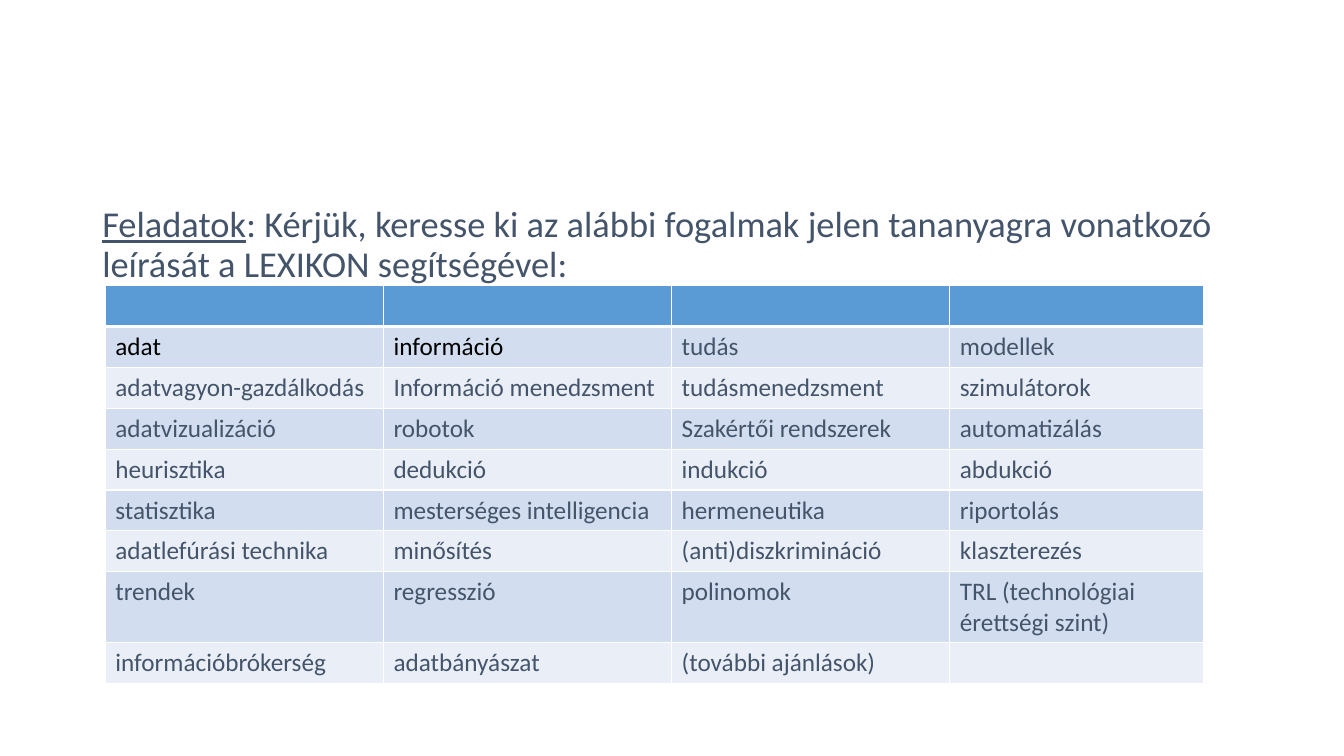
from dataclasses import dataclass

from lxml import etree
from pptx import Presentation
from pptx.dml.color import RGBColor
from pptx.oxml import ns
from pptx.util import Pt


@dataclass(frozen=True)
class Theme:
    font: str = "Calibri"
    text: str = "44546A"
    black: str = "000000"
    header: str = "5B9BD5"
    bands: tuple = ("D2DEEF", "EAEFF7")
    border: str = "FFFFFF"
    task_size: int = 26
    cell_size: int = 18
    thin: int = 1
    thick: int = 3


THEME = Theme()
COLUMN_WIDTHS = (198.7, 205.9, 198.7, 181.4)
ROW_HEIGHT = 29.2
BLACK_TERMS = ("adat", "információ")
TERMS = (
    ("adat", "információ", "tudás", "modellek"),
    ("adatvagyon-gazdálkodás", "Információ menedzsment", "tudásmenedzsment", "szimulátorok"),
    ("adatvizualizáció", "robotok", "Szakértői rendszerek", "automatizálás"),
    ("heurisztika", "dedukció", "indukció", "abdukció"),
    ("statisztika", "mesterséges intelligencia", "hermeneutika", "riportolás"),
    ("adatlefúrási technika", "minősítés", "(anti)diszkrimináció", "klaszterezés"),
    ("trendek", "regresszió", "polinomok", "TRL (technológiai érettségi szint)"),
    ("információbrókerség", "adatbányászat", "(további ajánlások)", ""),
)


def style_font(font, size, color):
    font.name = THEME.font
    font.size = Pt(size)
    font.color.rgb = RGBColor.from_string(color)


def add_run(p, words, size, color, underline=False):
    r = p.add_run()
    r.text = words
    style_font(r.font, size, color)
    r.font.underline = underline


def set_borders(cell, top, bottom):
    tc_pr = cell._tc.get_or_add_tcPr()
    widths = {"L": THEME.thin, "R": THEME.thin, "T": top, "B": bottom}
    for side, width in widths.items():
        line = etree.SubElement(tc_pr, ns.qn(f"a:ln{side}"), w=str(Pt(width)))
        fill = etree.SubElement(line, ns.qn("a:solidFill"))
        etree.SubElement(fill, ns.qn("a:srgbClr"), val=THEME.border)


def fill_cell(cell, words, color, top, bottom):
    set_borders(cell, top, bottom)
    cell.fill.solid()
    cell.fill.fore_color.rgb = RGBColor.from_string(color)
    p = cell.text_frame.paragraphs[0]
    if words:
        text_color = THEME.black if words in BLACK_TERMS else THEME.text
        add_run(p, words, THEME.cell_size, text_color)
    else:
        style_font(p.font, THEME.cell_size, THEME.text)


def add_task(s, left, top, width, height):
    sp = s.shapes.add_textbox(Pt(left), Pt(top), Pt(width), Pt(height))
    tf = sp.text_frame
    tf.word_wrap = True
    p = tf.paragraphs[0]
    p.line_spacing = 0.9
    add_run(p, "Feladatok", THEME.task_size, THEME.text, underline=True)
    add_run(
        p,
        ": Kérjük, keresse ki az alábbi fogalmak jelen tananyagra vonatkozó "
        "leírását a LEXIKON segítségével:",
        THEME.task_size,
        THEME.text,
    )


def add_terms(s, left, top):
    rows = (("",) * len(COLUMN_WIDTHS),) + TERMS
    frame = s.shapes.add_table(
        len(rows), len(COLUMN_WIDTHS), Pt(left), Pt(top),
        Pt(sum(COLUMN_WIDTHS)), Pt(ROW_HEIGHT * len(rows)),
    )
    table = frame.table
    for column, width in zip(table.columns, COLUMN_WIDTHS):
        column.width = Pt(width)
    for i, row in enumerate(rows):
        table.rows[i].height = Pt(ROW_HEIGHT)
        color = THEME.bands[(i - 1) % 2] if i else THEME.header
        top_line = THEME.thick if i == 1 else THEME.thin
        bottom_line = THEME.thick if i == 0 else THEME.thin
        for j, words in enumerate(row):
            fill_cell(table.cell(i, j), words, color, top_line, bottom_line)


def add_task_slide(prs):
    s = prs.slides.add_slide(prs.slide_layouts[6])
    add_task(s, 66, 144, 828, 384.5)
    add_terms(s, 75.2, 204)


def main():
    prs = Presentation()
    prs.slide_width = Pt(960)
    prs.slide_height = Pt(540)
    add_task_slide(prs)
    prs.save("out.pptx")


if __name__ == "__main__":
    main()
